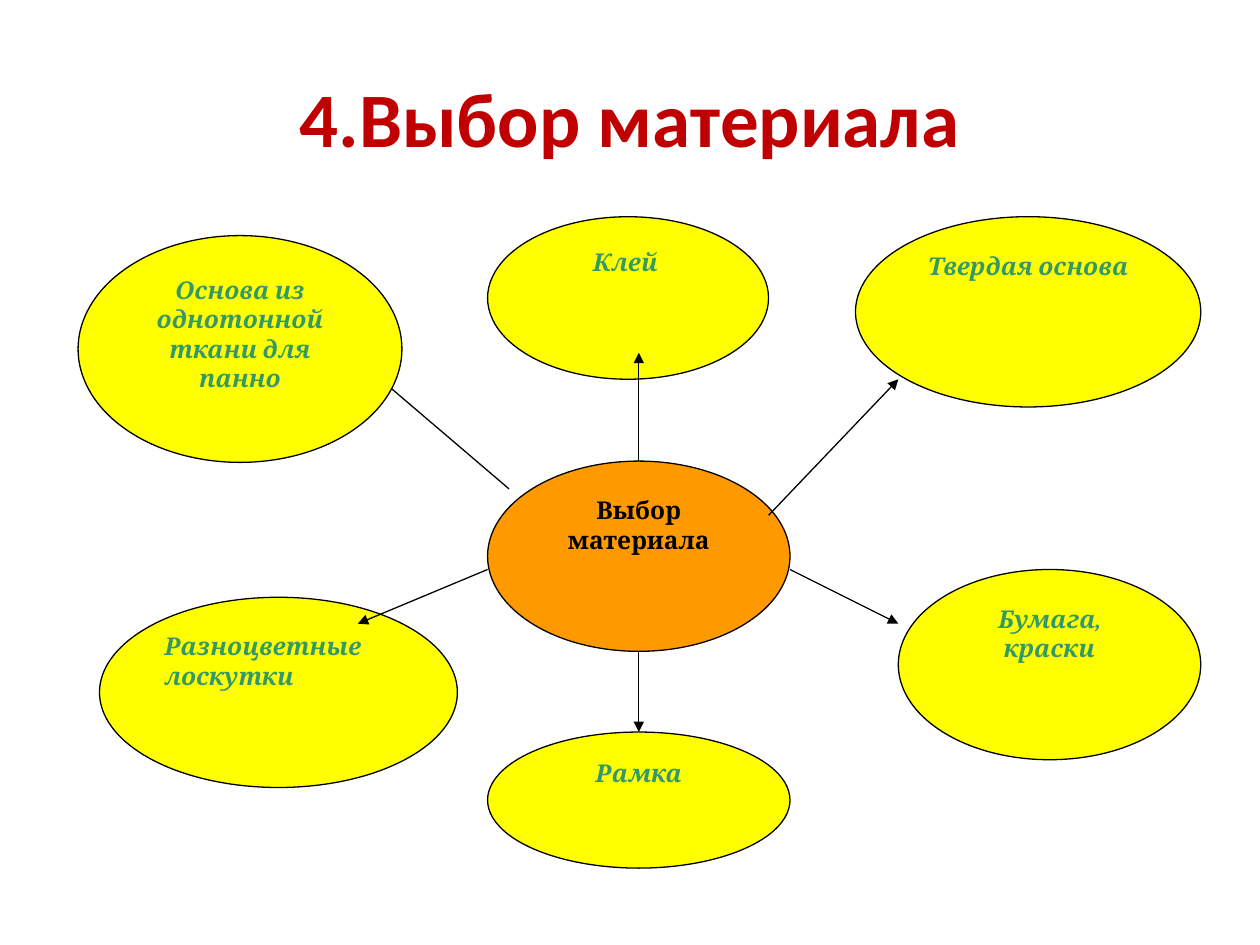
from pptx import Presentation
from pptx import util as u
from pptx.dml.color import RGBColor
from pptx.enum import shapes, text
from pptx.oxml.ns import qn
from lxml import etree

THEME = {
    "title": "C00000", "topic": "339966", "ink": "000000",
    "topic_fill": "FFFF00", "center_fill": "FF9900",
    "title_font": "Calibri", "body_font": "Cambria",
    "title_size": 44, "body_size": 14, "line": 0.75,
}

TITLE = ("4.Выбор материала", (0.5, 0.3, 9, 1.25))
CENTER = ("Выбор материала", (3.87, 3.66, 2.4, 1.51))
TOPICS = [
    ("Клей ", (3.87, 1.72, 2.23, 1.29), "CENTER"),
    ("Твердая основа", (6.79, 1.72, 2.74, 1.51), "CENTER"),
    ("Разноцветные лоскутки", (0.79, 4.74, 2.84, 1.51), "LEFT"),
    ("Рамка", (3.87, 5.81, 2.4, 1.08), "CENTER"),
    ("Бумага, краски", (7.13, 4.52, 2.4, 1.51), "CENTER"),
]
FRONT_TOPIC = ("Основа из однотонной ткани для панно", (0.62, 1.87, 2.57, 1.8), "CENTER")
UP_ARROW = ((5.07, 3.66), (5.07, 2.8))
DOWN_ARROW = ((5.07, 5.17), (5.07, 5.81))
SIDE_ARROWS = [
    ((3.87, 4.52), (2.84, 4.95)),
    ((4.04, 3.88), (3.02, 3.01)),
    ((6.1, 4.09), (7.13, 3.01)),
    ((6.27, 4.52), (7.13, 4.95)),
]


def color(name):
    return RGBColor.from_string(THEME[name])


def inches(values):
    return [u.Inches(value) for value in values]


def write(box, words, *, font="body_font", size="body_size", ink="topic",
          italic=False, align="CENTER", anchor="TOP"):
    frame = box.text_frame
    frame.word_wrap = True
    frame.vertical_anchor = getattr(text.MSO_ANCHOR, anchor)
    para = frame.paragraphs[0]
    para.alignment = getattr(text.PP_ALIGN, align)
    span = para.add_run()
    span.text = words
    span.font.name = THEME[font]
    span.font.size = u.Pt(THEME[size])
    span.font.bold = True
    span.font.italic = italic
    span.font.color.rgb = color(ink)


def add_ellipse(page, words, place, fill, **style):
    ellipse = page.shapes.add_shape(shapes.MSO_SHAPE.OVAL, *inches(place))
    ellipse.shadow.inherit = False
    ellipse.fill.solid()
    ellipse.fill.fore_color.rgb = color(fill)
    ellipse.line.color.rgb = color("ink")
    ellipse.line.width = u.Pt(THEME["line"])
    write(ellipse, words, **style)
    return ellipse


def add_topic(page, words, place, align):
    return add_ellipse(page, words, place, "topic_fill", italic=True, align=align)


def add_arrow(page, start, end):
    arrow = page.shapes.add_connector(
        shapes.MSO_CONNECTOR.STRAIGHT, *inches(start + end))
    arrow.line.color.rgb = color("ink")
    arrow.line.width = u.Pt(THEME["line"])
    etree.SubElement(arrow.line._get_or_add_ln(), qn("a:tailEnd"), type="triangle")
    etree.SubElement(arrow._element.spPr, qn("a:effectLst"))
    return arrow


def main():
    deck = Presentation()
    deck.slide_width, deck.slide_height = inches((10, 7.5))
    page = deck.slides.add_slide(deck.slide_layouts[6])

    words, place = TITLE
    write(page.shapes.add_textbox(*inches(place)), words, font="title_font",
          size="title_size", ink="title", anchor="MIDDLE")

    topics = {topic[0]: add_topic(page, *topic) for topic in TOPICS}
    center = add_ellipse(page, *CENTER, "center_fill", ink="ink")

    add_arrow(page, *UP_ARROW).begin_connect(center, 0)
    add_arrow(page, *DOWN_ARROW).end_connect(topics["Рамка"], 0)
    for start, end in SIDE_ARROWS:
        add_arrow(page, start, end)

    add_topic(page, *FRONT_TOPIC)
    deck.save("out.pptx")


if __name__ == "__main__":
    main()
